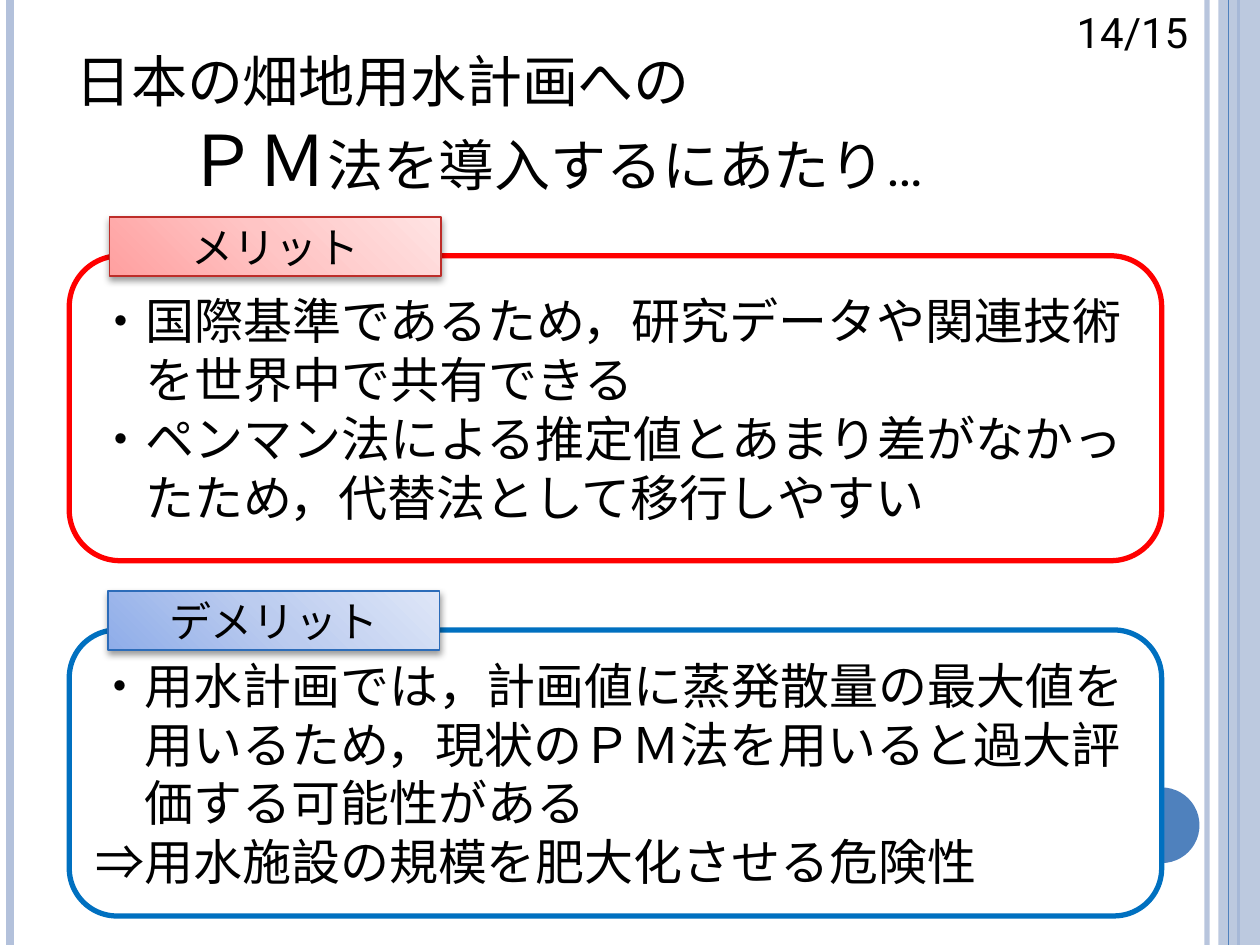
from lxml import etree
from pptx import Presentation
from pptx.dml import color
from pptx.enum import shapes, text
from pptx.oxml import parse_xml
from pptx.oxml import ns
from pptx.util import Inches, Pt

theme = {
    "font": "Roboto", "ink": "000000", "paper": "FFFFFF",
    "rail": "B3C1DB", "accent": "4F81BD",
    "title": 40, "body": 28, "label": 24,
    "good": {"edge": "FF0000", "rim": "BD2D29",
             "fade": ("FFA0A0", "FFC5C5", "FFE3E3")},
    "bad": {"edge": "0070C0", "rim": "2C6CB9",
            "fade": ("8FADE9", "BCCCEF", "DEE6F7")},
}
rgb = color.RGBColor.from_string
kind = shapes.MSO_SHAPE
side = text.PP_ALIGN
mid = text.MSO_ANCHOR.MIDDLE
cell = Inches(0.1)
cols, rows = 100, 75

deck = Presentation()
deck.slide_width, deck.slide_height = cols * cell, rows * cell
page = deck.slides.add_slide(deck.slide_layouts[6])
page.background.fill.solid()
page.background.fill.fore_color.rgb = rgb(theme["paper"])


def add(form, spot, fill=None, edge=None, width=1):
    area = [int(n * cell) for n in spot]
    if form is None:
        return page.shapes.add_textbox(*area)
    item = page.shapes.add_shape(form, *area)
    item.shadow.inherit = False
    if fill:
        item.fill.solid()
        item.fill.fore_color.rgb = rgb(fill)
    if edge:
        item.line.color.rgb = rgb(edge)
        item.line.width = Pt(width)
    else:
        item.line.fill.background()
    return item


def write(item, lines, size, align=side.LEFT, anchor=mid, caps=False):
    frame = item.text_frame
    frame.word_wrap = True
    frame.vertical_anchor = anchor
    for n, (indent, words) in enumerate(lines):
        para = frame.paragraphs[0] if n == 0 else frame.add_paragraph()
        para.alignment = align
        if indent:
            props = para._p.get_or_add_pPr()
            props.set("marL", str(Pt(indent)))
            props.set("indent", "0")
        run = para.add_run()
        run.text = words
        run.font.size = Pt(size)
        run.font.name = theme["font"]
        run.font.color.rgb = rgb(theme["ink"])
        props = run._r.get_or_add_rPr()
        etree.SubElement(props, ns.qn("a:ea")).set("typeface", theme["font"])
        if caps:
            props.set("cap", "small")


rails = [(95.8, "rail", 3, 93), (0.8, "rail", 4.5, 100),
         (98.3, "accent", 1.5, 100), (97.5, "accent", 0.75, 100)]
for n, (x, tone, width, alpha) in enumerate(rails):
    if n == 3:
        band = add(kind.RECTANGLE, (96.7, 0, 3.3, rows), theme["rail"])
        tint = band._element.spPr.find(".//" + ns.qn("a:srgbClr"))
        etree.SubElement(tint, ns.qn("a:alpha")).set("val", "87000")
    x = int(x * cell)
    rail = page.shapes.add_connector(
        shapes.MSO_CONNECTOR.STRAIGHT, x, 0, x, rows * cell)
    rail.line.color.rgb = rgb(theme[tone])
    rail.line.width = Pt(width)
    form = rail._element.spPr
    if alpha < 100:
        tint = form.find(".//" + ns.qn("a:srgbClr"))
        etree.SubElement(tint, ns.qn("a:alpha")).set("val", str(alpha * 1000))
    etree.SubElement(form, ns.qn("a:effectLst"))
add(kind.OVAL, (89.2, 62.5, 6, 6), theme["accent"])

write(add(None, (5, 3.9, 84.8, 12.5)),
      [(0, "日本の畑地用水計画への"),
       (theme["title"] * 1.6, "ＰＭ法を導入するにあたり…")],
      theme["title"], anchor=text.MSO_ANCHOR.BOTTOM, caps=True)
write(add(None, (82.8, 0, 12.5, 5)), [(0, "14/15")],
      theme["label"], side.RIGHT, text.MSO_ANCHOR.TOP)

step = theme["body"]
cards = [
    ("good", "メリット", 8.7, 20.3, 24.2, [
        (0, "・国際基準であるため，研究データや関連技術"),
        (step, "を世界中で共有できる"),
        (0, "・ペンマン法による推定値とあまり差がなかっ"),
        (step, "たため，代替法として移行しやすい")]),
    ("bad", "デメリット", 8.6, 50, 22.7, [
        (0, "・用水計画では，計画値に蒸発散量の最大値を"),
        (step, "用いるため，現状のＰＭ法を用いると過大評"),
        (step, "価する可能性がある"),
        (0, "⇒用水施設の規模を肥大化させる危険性")]),
]
for key, label, left, top, high, lines in cards:
    look = theme[key]
    card = add(kind.ROUNDED_RECTANGLE, (5.5, top, 86.7, high),
               theme["paper"], look["edge"], 3)
    write(card, lines, theme["body"])
    tab = add(kind.RECTANGLE, (left, top - 3.1, 26.3, 4.7),
              look["fade"][0], look["rim"])
    form = tab._element.spPr
    stops = "".join(
        f'<a:gs pos="{n * 50000}"><a:srgbClr val="{tone}"/></a:gs>'
        for n, tone in enumerate(look["fade"]))
    fade = parse_xml(
        f'<a:gradFill {ns.nsdecls("a")} rotWithShape="1"><a:gsLst>{stops}'
        '</a:gsLst><a:lin ang="18900000" scaled="0"/></a:gradFill>')
    form.replace(form.find(ns.qn("a:solidFill")), fade)
    shade = parse_xml(
        f'<a:outerShdw {ns.nsdecls("a")} blurRad="{Pt(4)}" dist="{Pt(2)}" '
        'dir="5400000" rotWithShape="0"><a:srgbClr val="000000">'
        '<a:alpha val="40000"/></a:srgbClr></a:outerShdw>')
    form.find(ns.qn("a:effectLst")).append(shade)
    write(tab, [(0, label)], theme["label"], side.CENTER)

deck.save("out.pptx")
